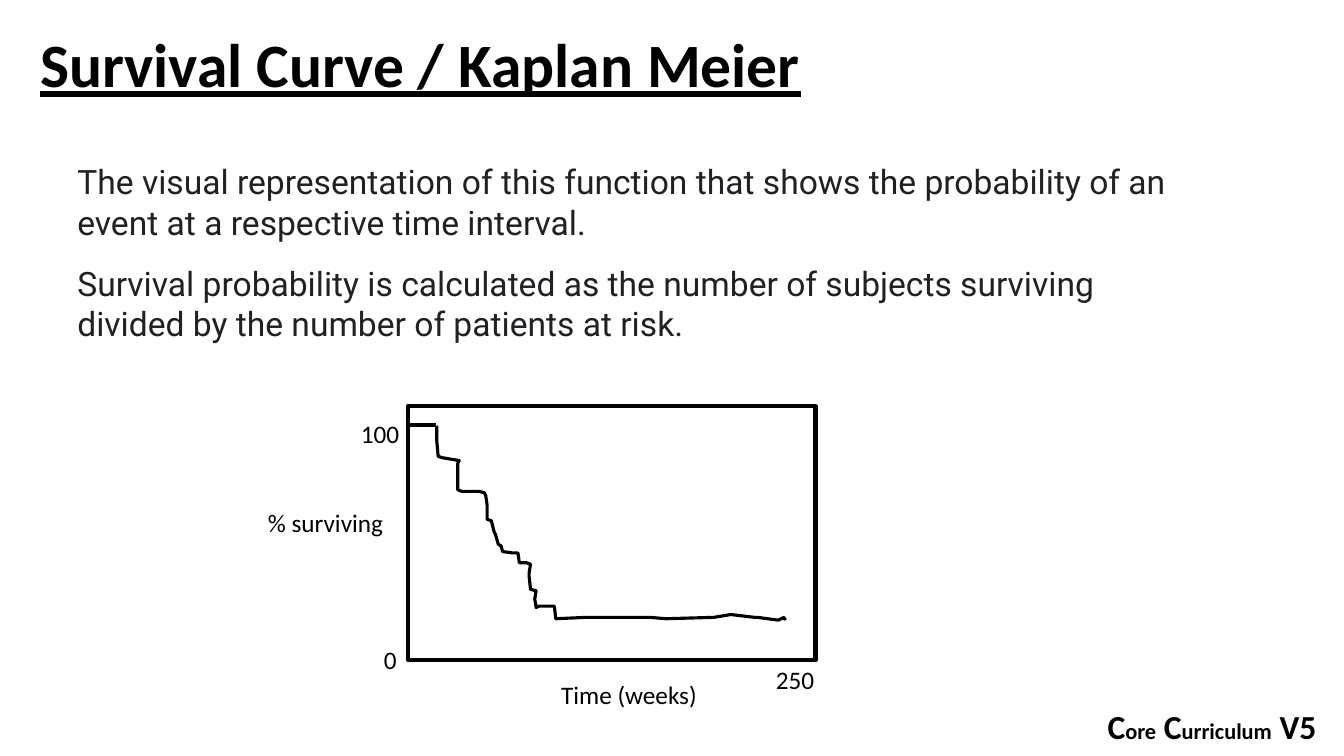
from pptx import Presentation
from pptx.dml.color import RGBColor
from pptx.enum.shapes import MSO_CONNECTOR, MSO_SHAPE
from pptx.enum.text import MSO_ANCHOR
from pptx.oxml.ns import qn
from pptx.util import Pt
from lxml import etree

RECT = MSO_SHAPE.RECTANGLE
STRAIGHT = MSO_CONNECTOR.STRAIGHT
TOP, BOTTOM = MSO_ANCHOR.TOP, MSO_ANCHOR.BOTTOM

THEME = {
    "black": RGBColor(0x00, 0x00, 0x00),
    "body_color": RGBColor(0x20, 0x21, 0x24),
    "font": "Calibri",
    "body_font": "Roboto",
    "title": 44,
    "body": 24,
    "label": 18,
    "small_caps": 16,
    "frame_line": 3,
    "curve_line": 2.25,
}

prs = Presentation()
prs.slide_width, prs.slide_height = Pt(960), Pt(540)
s = prs.slides.add_slide(prs.slide_layouts[6])


def add_text(box, runs, font=THEME["font"], color=THEME["black"], bold=False,
             wrap=True, anchor=TOP):
    """Add a text box from (text, size) runs and return its paragraph."""
    tf = s.shapes.add_textbox(*[Pt(v) for v in box]).text_frame
    tf.word_wrap = wrap
    tf.vertical_anchor = anchor
    p = tf.paragraphs[0]
    for text, size in runs:
        r = p.add_run()
        r.text = text
        r.font.name = font
        r.font.size = Pt(size)
        r.font.bold = bold
        r.font.color.rgb = color
    return p


# Footer: large initials, smaller letters
big, small = THEME["body"], THEME["small_caps"]
add_text((784, 501, 169.2, 36),
         [("C", big), ("ore", small), (" C", big), ("urriculum", small), (" V5", big)],
         bold=True)

# Title
p = add_text((21.6, 11.5, 798.5, 64), [("Survival Curve / Kaplan Meier", THEME["title"])],
             bold=True, anchor=BOTTOM)
p.line_spacing = 0.9
p.runs[0].font.underline = True

# Explanations
for top, width, text in [
    (111.6, 844.6, "The visual representation of this function that shows the "
                   "probability of an event at a respective time interval."),
    (184.3, 789.8, "Survival probability is calculated as the number of subjects "
                   "surviving divided by the number of patients at risk."),
]:
    add_text((48.2, top, width, 65.5), [(text, THEME["body"])],
             font=THEME["body_font"], color=THEME["body_color"])

# Plot frame
frame = s.shapes.add_shape(RECT, Pt(291.6), Pt(290.2), Pt(290.9), Pt(181.4))
frame.fill.background()

# Flat start of the curve at 100 %
start = s.shapes.add_connector(STRAIGHT, Pt(293), Pt(303.8), Pt(311.8), Pt(303.8))
etree.SubElement(start._element.spPr, qn("a:effectLst"))

# Hand-drawn survival steps
steps = [
    (312.5, 303.8), (311.8, 307.4), (311.8, 313.2), (312.5, 315.4), (313.2, 326.2),
    (316.1, 326.9), (327.6, 329), (326.9, 331.2), (326.6, 347), (327.2, 350),
    (329.8, 351), (342, 351.4), (345.6, 352.1), (347, 354.2), (347.8, 360.7),
    (348.5, 370.8), (351.4, 371.5), (352.1, 375.8), (352.8, 380.2), (354.2, 381.6),
    (356.4, 388.8), (357.8, 390.2), (359.3, 393.5), (366.5, 394.6), (370.1, 395.3),
    (370.8, 401.8), (375.8, 402.5), (378.7, 403.2), (378.2, 409), (378, 411.8),
    (378.7, 421.2), (383, 421.9), (381.6, 428.4), (383, 434.2), (385.2, 432.7),
    (396, 433.4), (396.7, 442.1), (419, 440.6), (464.4, 441.4), (475.9, 442.1),
    (510.5, 441.4), (515.5, 439.9), (522, 439.2), (539.3, 440.6), (541.4, 441.4),
    (555.8, 442.8), (560.2, 441.4), (560.9, 442.8),
]
fb = s.shapes.build_freeform(*steps[0], scale=Pt(1))
fb.add_line_segments(steps[1:], close=False)
curve = fb.convert_to_shape()
curve.fill.background()

for sp, weight in [(frame, THEME["frame_line"]), (start, THEME["frame_line"]),
                   (curve, THEME["curve_line"])]:
    sp.line.color.rgb = THEME["black"]
    sp.line.width = Pt(weight)
frame.shadow.inherit = curve.shadow.inherit = False

# Axis labels
for text, left, top, width in [
    ("% surviving", 184.3, 358.6, 97.9),
    ("100", 250.6, 295.2, 42.5),
    ("0", 267.1, 456.5, 23.8),
    ("Time (weeks)", 393.8, 481.7, 112.3),
    ("250", 547.2, 470.9, 42.5),
]:
    add_text((left, top, width, 28.8), [(text, THEME["label"])], wrap=False)

prs.save("out.pptx")
